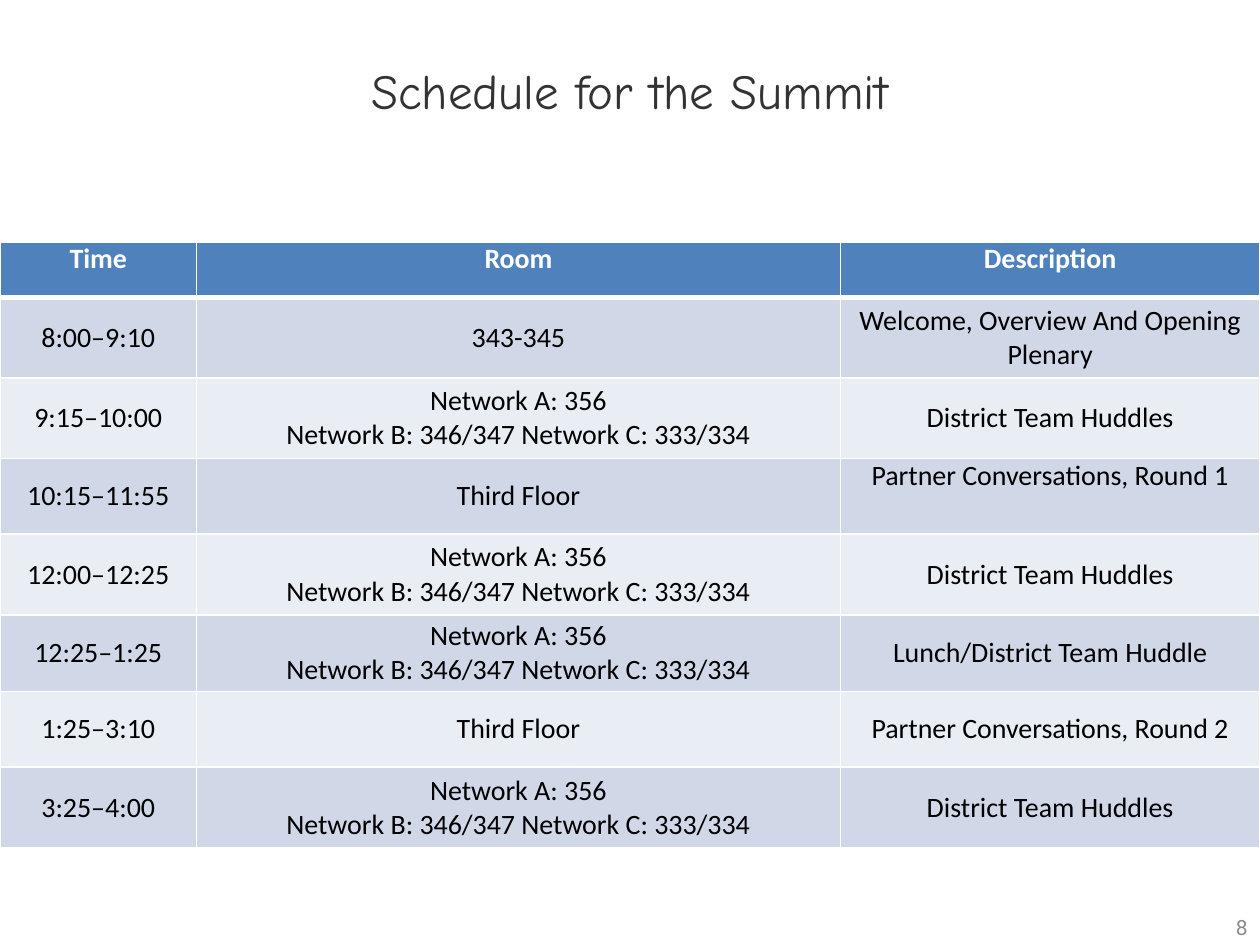
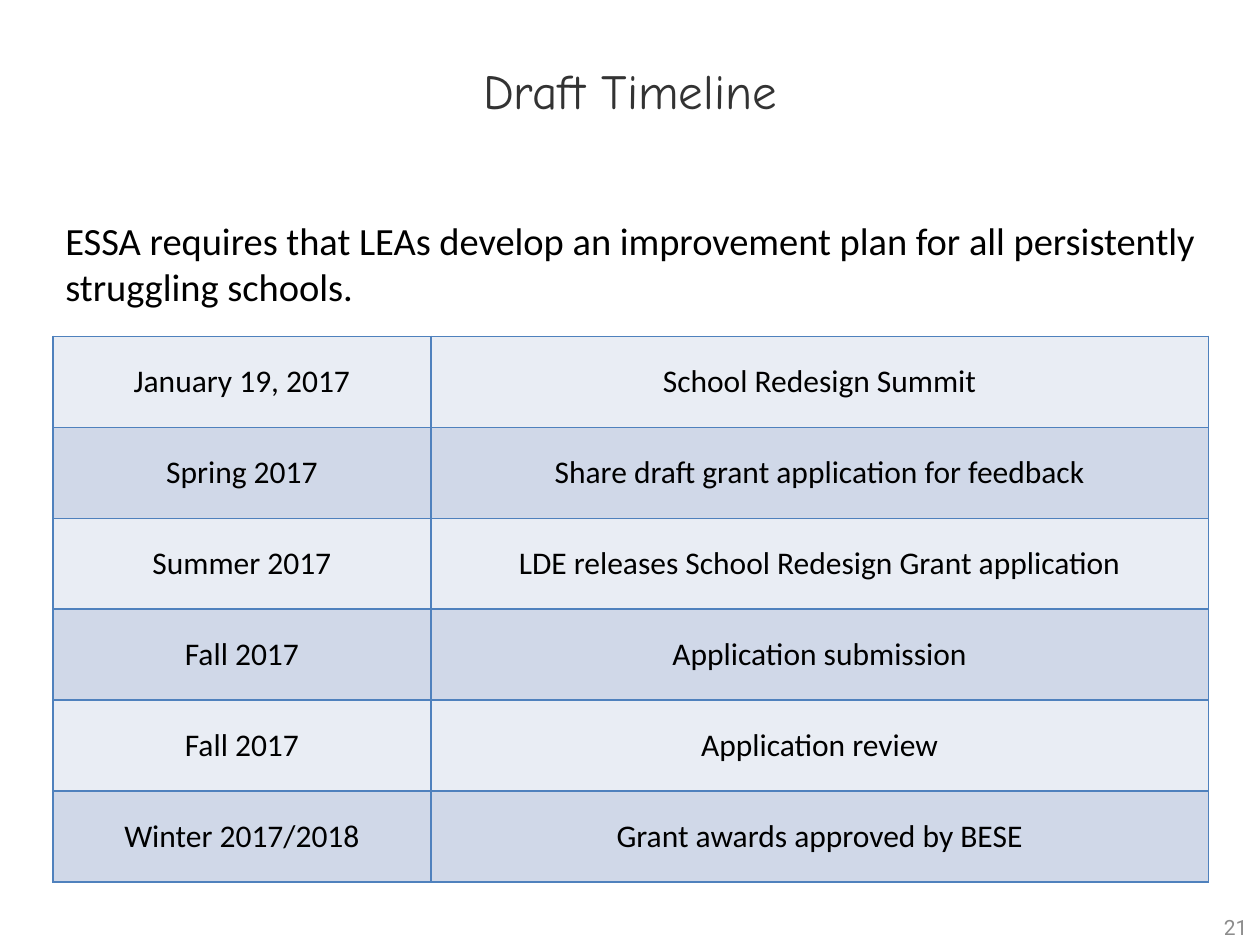
from lxml import etree
from pptx import Presentation
from pptx import util as u
from pptx.dml.color import RGBColor
from pptx.enum import text
from pptx.oxml.ns import qn

COLORS = {
    "title": "333333",
    "number": "8C8C8C",
    "ink": "000000",
    "white": "FFFFFF",
    "accent": "4F81BD",
    "band_dark": "D0D8E8",
    "band_light": "E9EDF4",
}
TITLE_BOX = (0, 0, 10, 1.42)
NUMBER_BOX = (7.67, 7.17, 2.33, 0.37)
MIDDLE, TOP = text.MSO_ANCHOR.MIDDLE, text.MSO_ANCHOR.TOP
CENTER, LEFT, RIGHT = text.PP_ALIGN.CENTER, text.PP_ALIGN.LEFT, text.PP_ALIGN.RIGHT

NETWORK_ROOMS = "Network A: 356\nNetwork B: 346/347 Network C: 333/334"
SCHEDULE = [
    ("Time", "Room", "Description"),
    ("8:00–9:10", "343-345", "Welcome, Overview And Opening Plenary"),
    ("9:15–10:00", NETWORK_ROOMS, "District Team Huddles"),
    ("10:15–11:55", "Third Floor", "Partner Conversations, Round 1"),
    ("12:00–12:25", NETWORK_ROOMS, "District Team Huddles"),
    ("12:25–1:25", NETWORK_ROOMS, "Lunch/District Team Huddle"),
    ("1:25–3:10", "Third Floor", "Partner Conversations, Round 2"),
    ("3:25–4:00", NETWORK_ROOMS, "District Team Huddles"),
]
TIMELINE = [
    ("January 19, 2017", "School Redesign Summit"),
    ("Spring 2017", "Share draft grant application for feedback"),
    ("Summer 2017", "LDE releases School Redesign Grant application"),
    ("Fall 2017", "Application submission"),
    ("Fall 2017", "Application review"),
    ("Winter 2017/2018", "Grant awards approved by BESE"),
]


def inches(box):
    return [u.Inches(length) for length in box]


def write(tf, words, size, color, font="Calibri", align=LEFT, bold=False):
    tf.text = words
    for p in tf.paragraphs:
        p.alignment = align
        p.font.size = u.Pt(size)
        p.font.name = font
        p.font.bold = bold
        p.font.color.rgb = RGBColor.from_string(COLORS[color])


def add_text(slide, box, words, size, color, anchor=TOP, **style):
    tf = slide.shapes.add_textbox(*inches(box)).text_frame
    tf.word_wrap = True
    tf.vertical_anchor = anchor
    write(tf, words, size, color, **style)


def add_titled_slide(prs, title, number):
    slide = prs.slides.add_slide(prs.slide_layouts[5])
    sp = slide.shapes.title
    sp.left, sp.top, sp.width, sp.height = inches(TITLE_BOX)
    sp.text_frame.vertical_anchor = MIDDLE
    write(sp.text_frame, title, 28, "title", "Comic Neue", CENTER)
    add_text(slide, NUMBER_BOX, number, 12, "number", MIDDLE, font="Roboto", align=RIGHT)
    return slide


def set_borders(cell, color, top=1, bottom=1):
    tc_pr = cell._tc.get_or_add_tcPr()
    for side, width in (("L", 1), ("R", 1), ("T", top), ("B", bottom)):
        ln = etree.SubElement(tc_pr, qn(f"a:ln{side}"), w=str(u.Pt(width)))
        fill = etree.SubElement(ln, qn("a:solidFill"))
        etree.SubElement(fill, qn("a:srgbClr"), val=COLORS[color])


def fill_cell(cell, color):
    cell.fill.solid()
    cell.fill.fore_color.rgb = RGBColor.from_string(COLORS[color])


def add_grid(slide, box, rows, col_widths, row_heights):
    frame = slide.shapes.add_table(len(rows), len(col_widths), *inches(box))
    table = frame.table
    for column, width in zip(table.columns, col_widths):
        column.width = u.Inches(width)
    for row, height in zip(table.rows, row_heights):
        row.height = u.Inches(height)
    return table


def add_schedule(slide, box):
    heights = [0.44, 0.64, 0.64, 0.6, 0.64, 0.61, 0.6, 0.64]
    table = add_grid(slide, box, SCHEDULE, [1.56, 5.11, 3.33], heights)
    for i, row in enumerate(SCHEDULE):
        header = i == 0
        band = "band_dark" if i % 2 else "band_light"
        for j, words in enumerate(row):
            cell = table.cell(i, j)
            cell.margin_left = cell.margin_right = u.Inches(0.07)
            cell.margin_top = cell.margin_bottom = 0
            cell.vertical_anchor = TOP if header or (i, j) == (3, 2) else MIDDLE
            set_borders(cell, "white", top=3 if i == 1 else 1, bottom=3 if header else 1)
            fill_cell(cell, "accent" if header else band)
            write(cell.text_frame, words, 16, "white" if header else "ink",
                  align=CENTER, bold=header)


def add_timeline(slide, box):
    heights = [box[3] / len(TIMELINE)] * len(TIMELINE)
    table = add_grid(slide, box, TIMELINE, [3, box[2] - 3], heights)
    table.first_row = False
    for i, row in enumerate(TIMELINE):
        for j, words in enumerate(row):
            cell = table.cell(i, j)
            cell.vertical_anchor = MIDDLE
            set_borders(cell, "accent")
            fill_cell(cell, "band_dark" if i % 2 else "band_light")
            write(cell.text_frame, words, 18, "ink", align=CENTER)


def main():
    prs = Presentation()
    prs.slide_width, prs.slide_height = u.Inches(10), u.Inches(7.5)

    slide = add_titled_slide(prs, "Schedule for the Summit", "8")
    add_schedule(slide, (0, 1.92, 10, 4.83))

    slide = add_titled_slide(prs, "Draft Timeline", "21")
    add_timeline(slide, (0.42, 2.67, 9.17, 4.33))
    add_text(slide, (0.42, 1.67, 9.25, 0.84),
             "ESSA requires that LEAs develop an improvement plan "
             "for all persistently struggling schools.", 22, "ink")

    prs.save("out.pptx")


if __name__ == "__main__":
    main()
